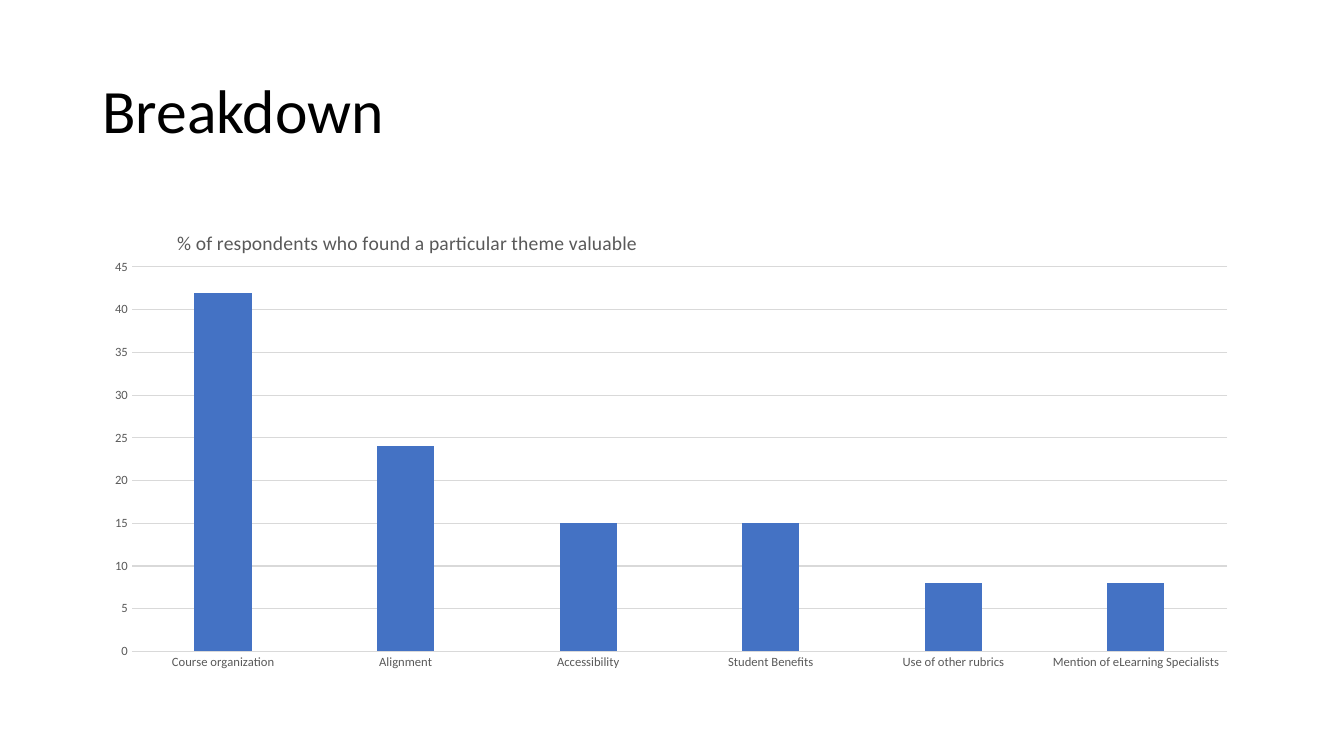
import pptx
import pptx.chart.data
import pptx.dml.color
import pptx.enum.chart
import pptx.enum.text
import pptx.oxml
import pptx.oxml.ns
import pptx.util

Pt = pptx.util.Pt
FONT = "Calibri"
BLACK, GRAY, RULE, BLUE = "000000", "595959", "D9D9D9", "4472C4"
SHARES = {
    "Course organization": 42,
    "Alignment": 24,
    "Accessibility": 15,
    "Student Benefits": 15,
    "Use of other rubrics": 8,
    "Mention of eLearning Specialists": 8,
}


def color(hex_string):
    return pptx.dml.color.RGBColor.from_string(hex_string)


def set_font(font, size, hex_string):
    font.name = FONT
    font.size = Pt(size)
    font.bold = False
    font.color.rgb = color(hex_string)


def set_line(line, hex_string):
    line.color.rgb = color(hex_string)
    line.width = Pt(0.75)


def set_layout(element, inner=False, **fractions):
    """Place a chart title or plot area by fractions of the chart box."""
    tags = ['<c:layoutTarget val="inner"/>'] if inner else []
    tags += [f'<c:{edge}Mode val="edge"/>' for edge in ("x", "y")]
    tags += [f'<c:{name} val="{value}"/>' for name, value in fractions.items()]
    layout = pptx.oxml.parse_xml(
        f'<c:layout {pptx.oxml.ns.nsdecls("c")}><c:manualLayout>'
        f'{"".join(tags)}</c:manualLayout></c:layout>'
    )
    for old_layout in element.findall(pptx.oxml.ns.qn("c:layout")):
        element.remove(old_layout)
    text = element.find(pptx.oxml.ns.qn("c:tx"))
    element.insert(0 if text is None else 1, layout)


def add_heading(slide, left, top, width, height):
    shape = slide.shapes.add_textbox(Pt(left), Pt(top), Pt(width), Pt(height))
    frame = shape.text_frame
    frame.word_wrap = True
    frame.vertical_anchor = pptx.enum.text.MSO_ANCHOR.MIDDLE
    paragraph = frame.paragraphs[0]
    paragraph.text = "Breakdown"
    paragraph.line_spacing = 0.9
    set_font(paragraph.font, 44, BLACK)


def add_theme_chart(slide, left, top, width, height):
    data = pptx.chart.data.CategoryChartData()
    data.categories = list(SHARES)
    data.add_series("Series 1", list(SHARES.values()))
    chart = slide.shapes.add_chart(
        pptx.enum.chart.XL_CHART_TYPE.COLUMN_CLUSTERED,
        Pt(left), Pt(top), Pt(width), Pt(height), data,
    ).chart
    set_font(chart.font, 10, BLACK)
    chart.has_legend = False

    # Chart title
    chart.has_title = True
    title = chart.chart_title
    title.include_in_layout = False
    paragraph = title.text_frame.paragraphs[0]
    paragraph.text = "% of respondents who found a particular theme valuable"
    set_font(paragraph.font, 14, GRAY)
    set_layout(title._element, x=0.07, y=0.05)

    # Columns
    plot = chart.plots[0]
    plot.gap_width = 219
    plot.overlap = -27
    plot.vary_by_categories = False
    fill = plot.series[0].format.fill
    fill.solid()
    fill.fore_color.rgb = color(BLUE)

    # Axes
    for axis in (chart.category_axis, chart.value_axis):
        axis.major_tick_mark = pptx.enum.chart.XL_TICK_MARK.NONE
        axis.minor_tick_mark = pptx.enum.chart.XL_TICK_MARK.NONE
        set_font(axis.tick_labels.font, 9, GRAY)
    set_line(chart.category_axis.format.line, RULE)
    value_axis = chart.value_axis
    value_axis.minimum_scale, value_axis.maximum_scale = 0, 45
    value_axis.major_unit = 5
    value_axis.format.line.fill.background()
    value_axis.has_major_gridlines = True
    set_line(value_axis.major_gridlines.format.line, RULE)

    plot_area = chart._chartSpace.chart.plotArea
    set_layout(plot_area, inner=True, x=0.034, y=0.137, w=0.945, h=0.802)


def main():
    presentation = pptx.Presentation()
    presentation.slide_width = Pt(960)
    presentation.slide_height = Pt(540)
    slide = presentation.slides.add_slide(presentation.slide_layouts[6])
    add_heading(slide, 66, 28.75, 828, 104.4)
    add_theme_chart(slide, 66, 143.75, 828, 342.6)
    presentation.save("out.pptx")


if __name__ == "__main__":
    main()
